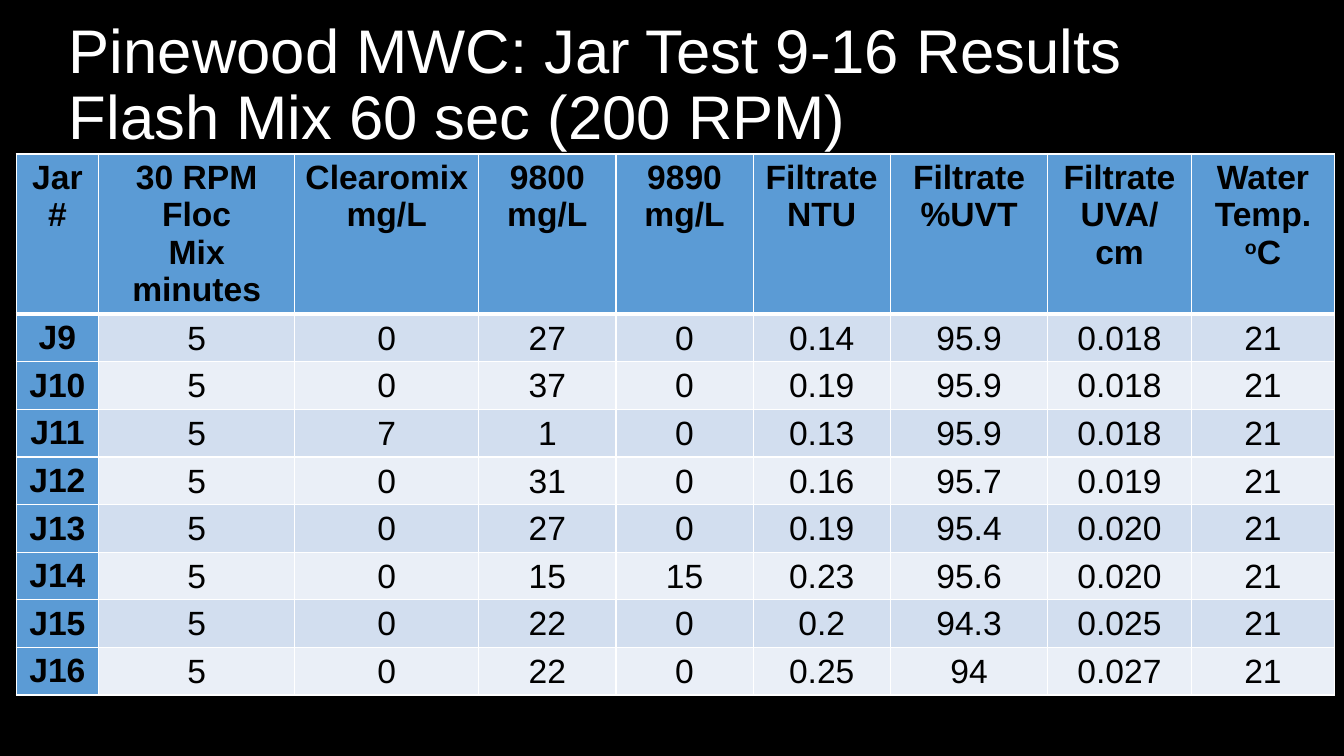
from lxml.etree import SubElement
from pptx import Presentation
from pptx.dml.color import RGBColor
from pptx.enum.text import MSO_ANCHOR as ANCHOR, MSO_AUTO_SIZE as AUTO, PP_ALIGN as ALIGN
from pptx.oxml.ns import qn
from pptx.util import Pt

BLACK = RGBColor(0x00, 0x00, 0x00)
WHITE = RGBColor(0xFF, 0xFF, 0xFF)
BLUE = RGBColor(0x5B, 0x9B, 0xD5)
BAND_DARK = RGBColor(0xD2, 0xDE, 0xEF)
BAND_LIGHT = RGBColor(0xEA, 0xEF, 0xF7)

HEADERS = ["Jar\n#", "30 RPM\nFloc\nMix\nminutes", "Clearomix\nmg/L", "9800\nmg/L",
           "9890\nmg/L", "Filtrate\nNTU", "Filtrate\n%UVT", "Filtrate\nUVA/cm",
           "Water\nTemp.\noC"]
JARS = [
    ["J9", "5", "0", "27", "0", "0.14", "95.9", "0.018", "21"],
    ["J10", "5", "0", "37", "0", "0.19", "95.9", "0.018", "21"],
    ["J11", "5", "7", "1", "0", "0.13", "95.9", "0.018", "21"],
    ["J12", "5", "0", "31", "0", "0.16", "95.7", "0.019", "21"],
    ["J13", "5", "0", "27", "0", "0.19", "95.4", "0.020", "21"],
    ["J14", "5", "0", "15", "15", "0.23", "95.6", "0.020", "21"],
    ["J15", "5", "0", "22", "0", "0.2", "94.3", "0.025", "21"],
    ["J16", "5", "0", "22", "0", "0.25", "94", "0.027", "21"],
]
COL_WIDTHS = [59, 140, 131.5, 98, 98, 98, 112.5, 102.5, 102.5]
HEADER_H, ROW_H = 114.5, 34


def format_run(r, size, color, bold=False):
    values = {"name": "Arial", "size": Pt(size), "bold": bold}
    for name, value in values.items():
        setattr(r.font, name, value)
    r.font.color.rgb = color


def add_border(cell, side, width):
    ln = SubElement(cell._tc.get_or_add_tcPr(), qn("a:ln" + side), w=str(Pt(width)))
    fill = SubElement(ln, qn("a:solidFill"))
    SubElement(fill, qn("a:srgbClr"), val=str(WHITE))


# Slide and background
prs = Presentation()
prs.slide_width, prs.slide_height = Pt(960), Pt(540)
s = prs.slides.add_slide(prs.slide_layouts[5])
s.background.fill.solid()
s.background.fill.fore_color.rgb = BLACK

# Title
title = s.shapes.title
box = {"left": 42, "top": 9.5, "width": 852.5, "height": 104.5}
for name, value in box.items():
    setattr(title, name, Pt(value))
tf = title.text_frame
tf.text = "Pinewood MWC: Jar Test 9-16 Results\vFlash Mix 60 sec (200 RPM)"
tf.word_wrap, tf.auto_size, tf.vertical_anchor = True, AUTO.NONE, ANCHOR.MIDDLE
p = tf.paragraphs[0]
p.alignment, p.line_spacing = ALIGN.LEFT, 0.9
for r in p.runs:
    format_run(r, 44, WHITE)

# Results table
rows = [HEADERS] + JARS
frame = s.shapes.add_table(len(rows), len(HEADERS), Pt(11.5), Pt(110),
                           Pt(sum(COL_WIDTHS)), Pt(HEADER_H + ROW_H * len(JARS)))
table = frame.table
table.first_col = True
for col, width in zip(table.columns, COL_WIDTHS):
    col.width = Pt(width)
for i, row in enumerate(rows):
    table.rows[i].height = Pt(ROW_H if i else HEADER_H)
    for j, text in enumerate(row):
        cell = table.cell(i, j)
        is_label = i == 0 or j == 0

        # Borders, with a heavy rule below the header
        widths = {"L": 1, "R": 1, "T": 3 if i == 1 else 1, "B": 3 if i == 0 else 1}
        for side, width in widths.items():
            add_border(cell, side, width)
        cell.fill.solid()
        cell.fill.fore_color.rgb = BLUE if is_label else BAND_DARK if i % 2 else BAND_LIGHT

        # Cell text
        cell.text = text
        if not is_label:
            cell.vertical_anchor = ANCHOR.MIDDLE
            cell.margin_left = cell.margin_right = cell.margin_top = Pt(0.7)
            cell.margin_bottom = Pt(0)
        for p in cell.text_frame.paragraphs:
            p.alignment = ALIGN.CENTER
            if p.text == "oC":
                p.runs[0].text = "o"
                p.runs[0]._r.get_or_add_rPr().set("baseline", "30000")
                p.add_run().text = "C"
            for r in p.runs:
                format_run(r, 24, BLACK, is_label)

prs.save("out.pptx")
